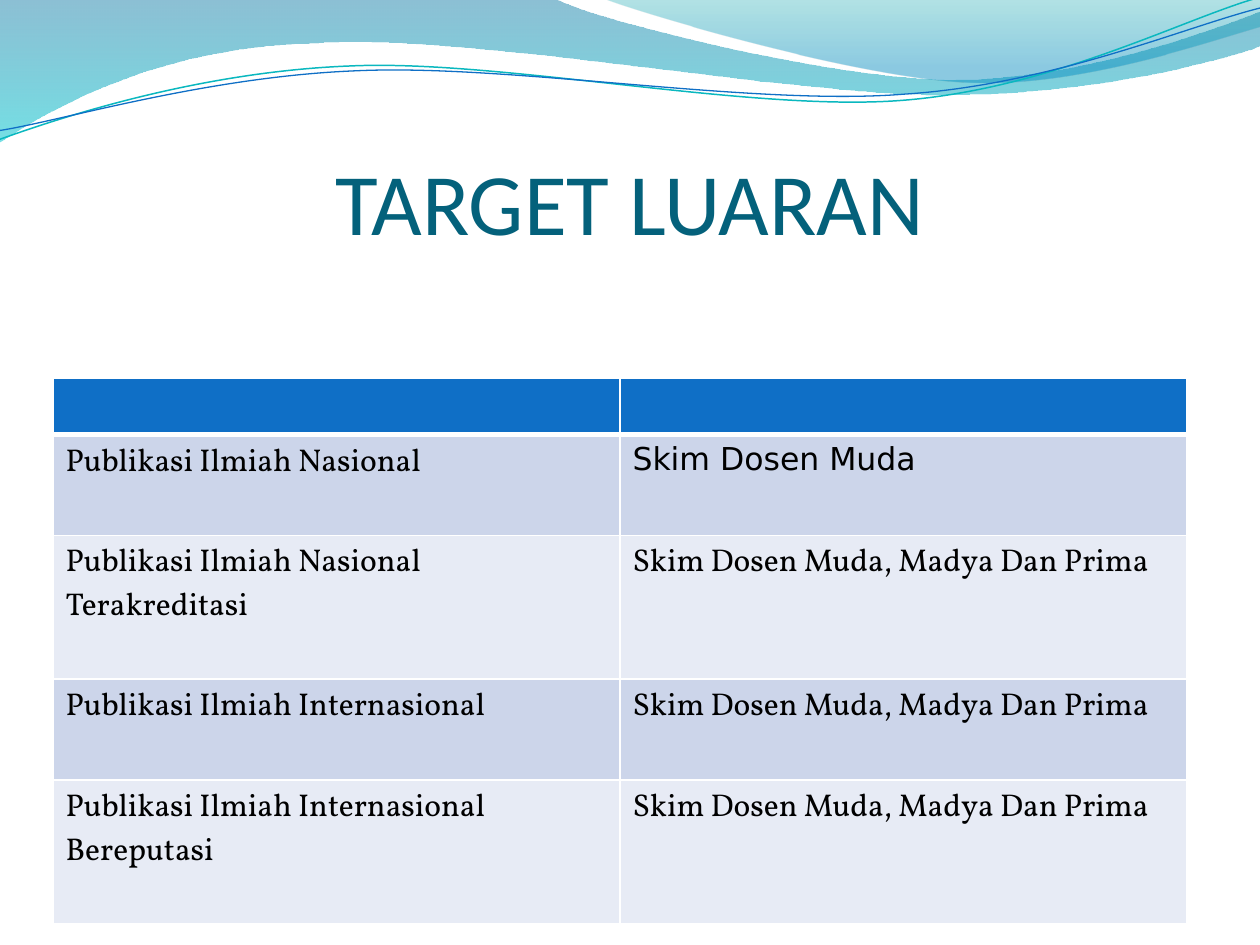
from lxml import etree
from pptx import Presentation
from pptx.dml.color import RGBColor
from pptx.enum.text import MSO_ANCHOR as ANCHOR, PP_ALIGN as ALIGN
from pptx.oxml.ns import qn
from pptx.util import Inches, Pt

COLORS = {
    "title": "04617B", "text": "000000", "white": "FFFFFF",
    "header": "0F6FC6", "band_dark": "CCD5EA", "band_light": "E7EBF5",
    "wave_top": "0074A1", "wave_bottom": "00C6CF",
    "crest_top": "00A1A9", "crest_bottom": "008BBF",
    "teal_line": "0AB8BF", "blue_line": "0F6FC6",
}
SERIF, SANS = "Vollkorn", "DejaVu Sans"
ALL_SKIMS = "Skim Dosen Muda, Madya Dan Prima"
# Output, scheme, font of the scheme, row height
ROWS = [
    ("Publikasi Ilmiah Nasional", "Skim Dosen Muda", SANS, 0.8),
    ("Publikasi Ilmiah Nasional Terakreditasi", ALL_SKIMS, SERIF, 1.14),
    ("Publikasi Ilmiah Internasional", ALL_SKIMS, SERIF, 0.8),
    ("Publikasi Ilmiah Internasional Bereputasi", ALL_SKIMS, SERIF, 1.14),
]

# Outlines in inches: a pair is a straight line, six numbers a Bezier curve
WAVE = [(0, 0), (4.4, -0.01), (4.76, 0.17, 6.64, 0.63, 7.58, 0.63),
        (8.53, 0.63, 9.58, 0.26, 10, 0.09), (10.01, 0.36),
        (9.83, 0.44, 8.7, 0.76, 7.46, 0.75), (6.22, 0.75, 3.82, 0.28, 2.57, 0.34),
        (1.29, 0.36, 0.46, 0.83, -0.01, 1.13), (0, 0)]
CREST = [(4.79, -0.01), (5.09, 0.11, 6.82, 0.62, 7.69, 0.65),
         (8.56, 0.69, 9.61, 0.32, 10, 0.21), (10, 0), (4.79, -0.01)]
# The two thin lines are level here and tilted when drawn
LINE_TILT = 357.3
TEAL_CURVE = [(-0.02, 0.87), (0.47, 0.72, 1.58, 0.41, 2.78, 0.42),
              (3.96, 0.42, 5.91, 0.93, 7.12, 0.9), (8.32, 0.87, 9.4, 0.36, 10, 0.22)]
BLUE_CURVE = [(-0.02, 0.8), (0.46, 0.75, 1.64, 0.45, 2.83, 0.46),
              (4.04, 0.46, 5.96, 0.89, 7.16, 0.85), (8.35, 0.83, 9.42, 0.42, 10.02, 0.3)]


def rgb(name):
    return RGBColor.from_string(COLORS[name])


def add_outline(slide, left, top, outline, close):
    """Draw a freeform through the end points, then bend its curved segments."""
    ends = [(left + Inches(seg[-2]), top + Inches(seg[-1])) for seg in outline]
    builder = slide.shapes.build_freeform(*ends[0])
    builder.add_line_segments(ends[1:], close=close)
    sp = builder.convert_to_shape()
    sp.shadow.inherit = False
    lines = list(sp._element.iter(qn("a:lnTo")))
    for line, seg in zip(lines, outline[1:]):
        if len(seg) == 2:
            continue
        curve = etree.Element(qn("a:cubicBezTo"))
        for x, y in zip(seg[::2], seg[1::2]):
            etree.SubElement(curve, qn("a:pt"), x=str(left + Inches(x) - sp.left),
                             y=str(top + Inches(y) - sp.top))
        line.getparent().replace(line, curve)
    return sp


def add_gradient_area(slide, left, top, outline, stops):
    sp = add_outline(slide, left, top, outline, True)
    sp.line.fill.background()
    sp.fill.gradient()
    sp.fill.gradient_angle = 270
    for stop, (position, color, _) in zip(sp.fill.gradient_stops, stops):
        stop.position = position
        stop.color.rgb = rgb(color)
    grad = sp._element.spPr.find(qn("a:gradFill"))
    for clr, (_, _, opacity) in zip(grad.iter(qn("a:srgbClr")), stops):
        etree.SubElement(clr, qn("a:alpha"), val=str(opacity * 1000))


def add_waves(slide, left, top):
    add_gradient_area(slide, left, top, WAVE,
                      [(0, "wave_top", 45), (1, "wave_bottom", 55)])
    add_gradient_area(slide, left, top, CREST,
                      [(0, "crest_top", 30), (0.8, "crest_bottom", 45)])
    for outline, color, width in ((TEAL_CURVE, "teal_line", 0.85),
                                  (BLUE_CURVE, "blue_line", 0.75)):
        sp = add_outline(slide, left, top, outline, False)
        sp.rotation = LINE_TILT
        sp.fill.background()
        sp.line.color.rgb = rgb(color)
        sp.line.width = Pt(width)


def add_title(slide, left, top, width, height):
    tf = slide.shapes.add_textbox(left, top, width, height).text_frame
    tf.word_wrap = True
    tf.vertical_anchor = ANCHOR.BOTTOM
    tf.margin_left = tf.margin_right = tf.margin_bottom = 0
    p = tf.paragraphs[0]
    p.text = "TARGET LUARAN"
    p.alignment = ALIGN.CENTER
    p.font.name, p.font.size = "Calibri", Pt(50)
    p.font.color.rgb = rgb("title")


def style_cell(cell, fill, bottom=1, top=1):
    cell.fill.solid()
    cell.fill.fore_color.rgb = rgb(fill)
    tc_pr = cell._tc.get_or_add_tcPr()
    # Borders come before the fill
    for i, (side, width) in enumerate((("L", 1), ("R", 1), ("T", top), ("B", bottom))):
        ln = etree.Element(qn(f"a:ln{side}"), w=str(Pt(width)))
        solid = etree.SubElement(ln, qn("a:solidFill"))
        etree.SubElement(solid, qn("a:srgbClr"), val=COLORS["white"])
        tc_pr.insert(i, ln)


def add_output_table(slide, left, top, width):
    heights = [Inches(0.45)] + [Inches(row[3]) for row in ROWS]
    table = slide.shapes.add_table(len(heights), 2, left, top, width, sum(heights)).table
    for row, height in zip(table.rows, heights):
        row.height = height
    # Empty header
    for cell in table.rows[0].cells:
        style_cell(cell, "header", bottom=3)
    # Banded rows
    for i, (output, scheme, scheme_font, _) in enumerate(ROWS, 1):
        for cell, text, font in zip(table.rows[i].cells, (output, scheme),
                                    (SERIF, scheme_font)):
            style_cell(cell, "band_dark" if i % 2 else "band_light",
                       top=3 if i == 1 else 1)
            p = cell.text_frame.paragraphs[0]
            p.text = text
            p.font.name, p.font.size = font, Pt(18)
            p.font.color.rgb = rgb("text")


def main():
    prs = Presentation()
    prs.slide_width, prs.slide_height = Inches(10), Inches(7.5)
    slide = prs.slides.add_slide(prs.slide_layouts[6])
    add_waves(slide, 0, 0)
    add_title(slide, Inches(0.5), Inches(0.76), Inches(9), Inches(1.25))
    add_output_table(slide, Inches(0.42), Inches(3), Inches(9))
    prs.save("out.pptx")


if __name__ == "__main__":
    main()
